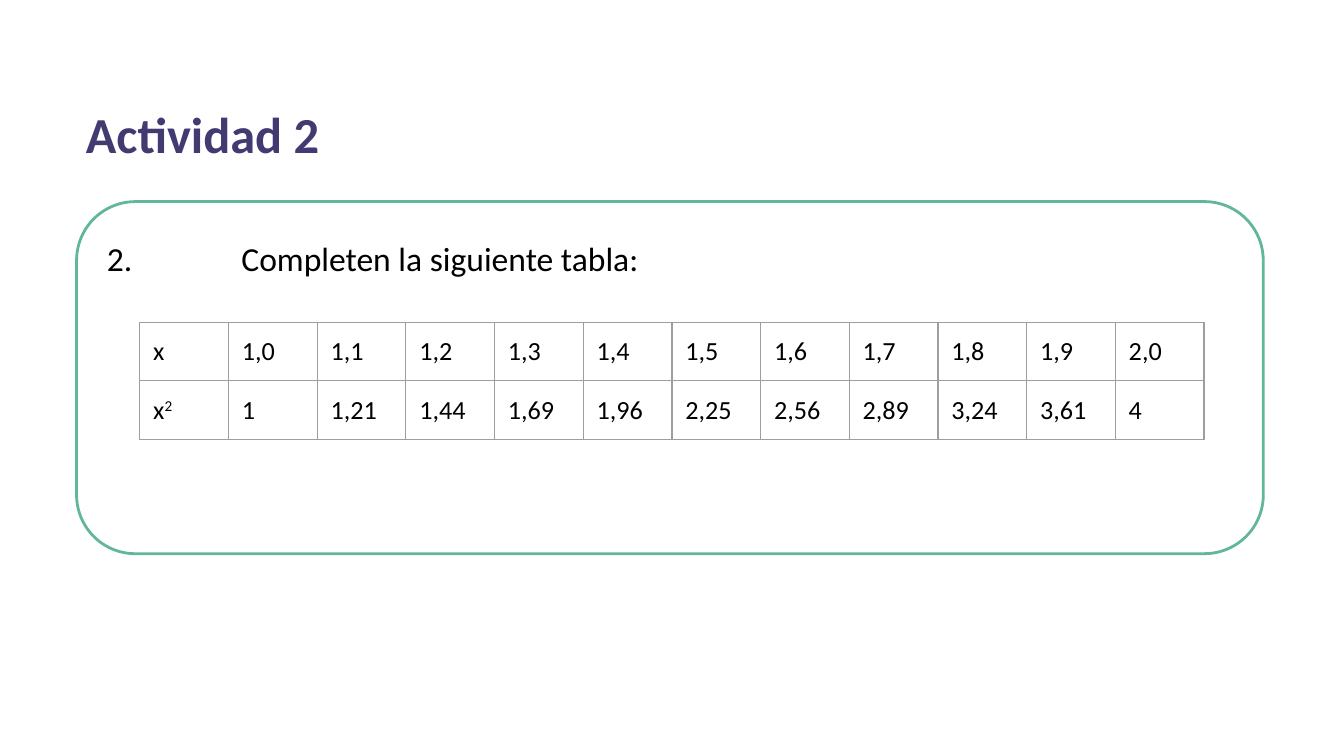
"""Build the "Actividad 2" slide with a table of squares."""
from dataclasses import dataclass

from lxml import etree
from pptx import Presentation
from pptx.dml.color import RGBColor
from pptx.enum import shapes, text
from pptx.oxml import ns
from pptx.util import Inches, Pt

FONT = "Calibri"
BLACK, PURPLE, GREEN, GRAY = "000000", "423B71", "62B799", "9E9E9E"
SLIDE_WIDTH = 10
SLIDE_HEIGHT = SLIDE_WIDTH * 9 / 16


@dataclass(frozen=True)
class Span:
    content: str
    size: float
    color: str = BLACK
    bold: bool = False
    superscript: bool = False


@dataclass(frozen=True)
class Box:
    left: float
    top: float
    width: float
    height: float

    def lengths(self) -> tuple:
        return tuple(Inches(n) for n in (self.left, self.top, self.width, self.height))


def color(hex_value: str) -> RGBColor:
    return RGBColor.from_string(hex_value)


def add_run(paragraph, span: Span) -> None:
    run = paragraph.add_run()
    run.text = span.content
    run.font.name = FONT
    run.font.size = Pt(span.size)
    run.font.bold = span.bold
    run.font.color.rgb = color(span.color)
    if span.superscript:
        run._r.get_or_add_rPr().set("baseline", "30000")


def set_insets(target, horizontal: float, vertical: float) -> None:
    target.margin_left = target.margin_right = Inches(horizontal)
    target.margin_top = target.margin_bottom = Inches(vertical)


def add_title(slide, box: Box, span: Span) -> None:
    frame = slide.shapes.add_textbox(*box.lengths()).text_frame
    frame.word_wrap = True
    set_insets(frame, 0.07, 0.04)
    add_run(frame.paragraphs[0], span)


def set_borders(cell, hex_value: str, width: float) -> None:
    properties = cell._tc.get_or_add_tcPr()
    for side in ("a:lnL", "a:lnR", "a:lnT", "a:lnB"):
        line = etree.SubElement(properties, ns.qn(side), w=str(Pt(width)))
        fill = etree.SubElement(line, ns.qn("a:solidFill"))
        etree.SubElement(fill, ns.qn("a:srgbClr"), val=hex_value)


def add_value_table(slide, box: Box, rows: list[list[list[Span]]]) -> None:
    table = slide.shapes.add_table(len(rows), len(rows[0]), *box.lengths()).table
    table.first_row = table.horz_banding = False
    for row_index, row in enumerate(rows):
        for column_index, spans in enumerate(row):
            cell = table.cell(row_index, column_index)
            set_insets(cell, 0.1, 0.1)
            set_borders(cell, GRAY, 0.75)
            cell.fill.background()
            for span in spans:
                add_run(cell.text_frame.paragraphs[0], span)


def add_task_frame(slide, box: Box, span: Span) -> None:
    shape = slide.shapes.add_shape(shapes.MSO_SHAPE.ROUNDED_RECTANGLE, *box.lengths())
    shape.shadow.inherit = False
    shape.adjustments[0] = 0.167
    shape.fill.background()
    shape.line.color.rgb = color(GREEN)
    shape.line.width = Pt(1.5)
    frame = shape.text_frame
    frame.word_wrap = True
    frame.vertical_anchor = text.MSO_ANCHOR.TOP
    set_insets(frame, 0.1, 0.14)
    paragraph = frame.paragraphs[0]
    paragraph.alignment = text.PP_ALIGN.LEFT
    tabs = etree.SubElement(paragraph._p.get_or_add_pPr(), ns.qn("a:tabLst"))
    etree.SubElement(tabs, ns.qn("a:tab"), pos=str(Inches(1)), algn="l")
    add_run(paragraph, span)


def decimal(value: float) -> str:
    return f"{value:g}".replace(".", ",")


def main() -> None:
    presentation = Presentation()
    presentation.slide_width = Inches(SLIDE_WIDTH)
    presentation.slide_height = Inches(SLIDE_HEIGHT)
    slide = presentation.slides.add_slide(presentation.slide_layouts[6])
    tenths = range(10, 21)
    inputs = [[Span(f"{n // 10},{n % 10}", 14)] for n in tenths]
    squares = [[Span(decimal(n * n / 100), 14)] for n in tenths]
    rows = [
        [[Span("x", 14)], *inputs],
        [[Span("x", 14), Span("2", 14, superscript=True)], *squares],
    ]
    add_title(slide, Box(0.57, 0.73, 6.7, 0.53), Span("Actividad 2", 27, PURPLE, True))
    add_value_table(slide, Box(1.04, 2.4, 7.92, 0.84), rows)
    add_task_frame(slide, Box(0.57, 1.5, 8.83, 2.62),
                   Span("2.\tCompleten la siguiente tabla:", 18))
    presentation.save("out.pptx")


if __name__ == "__main__":
    main()
